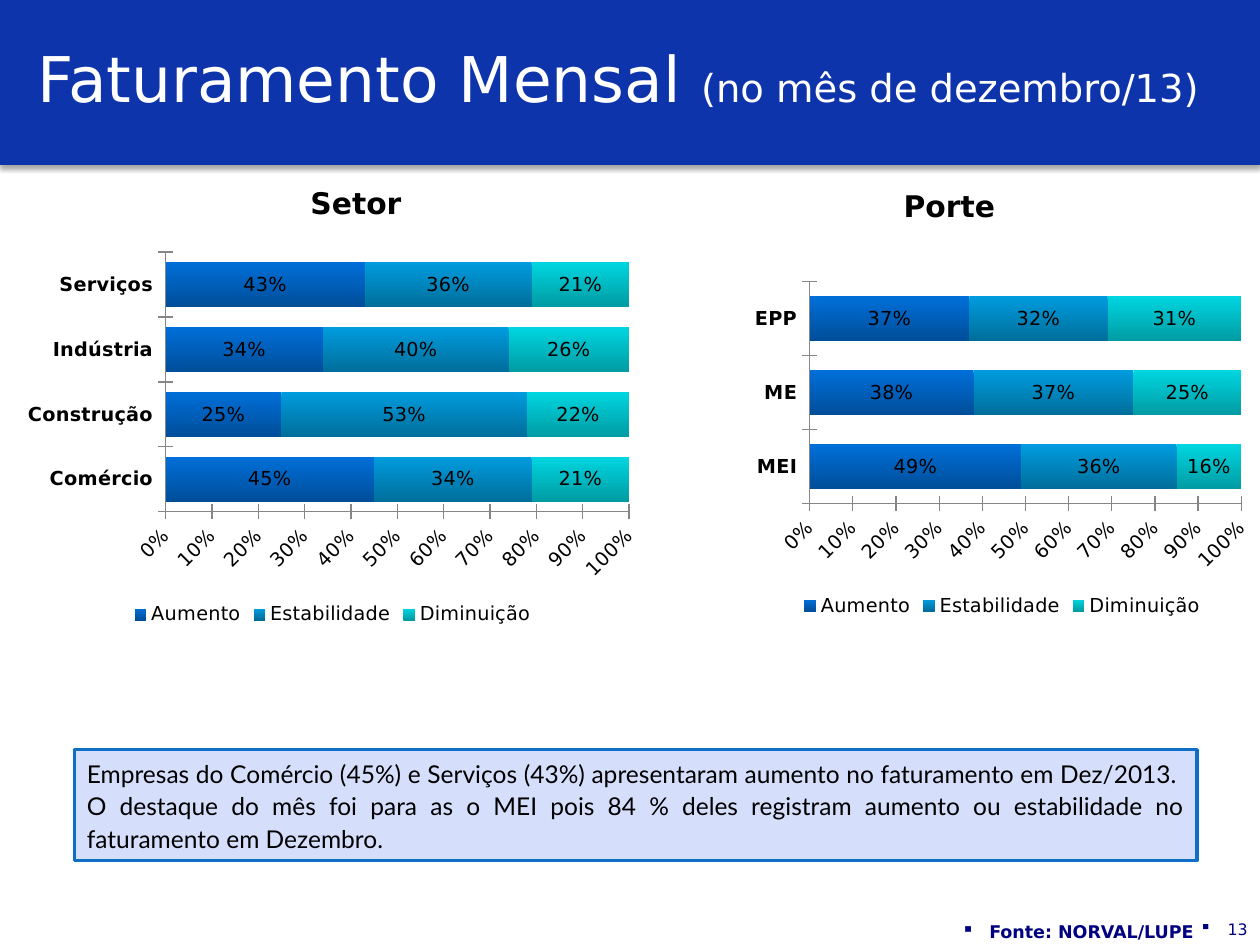
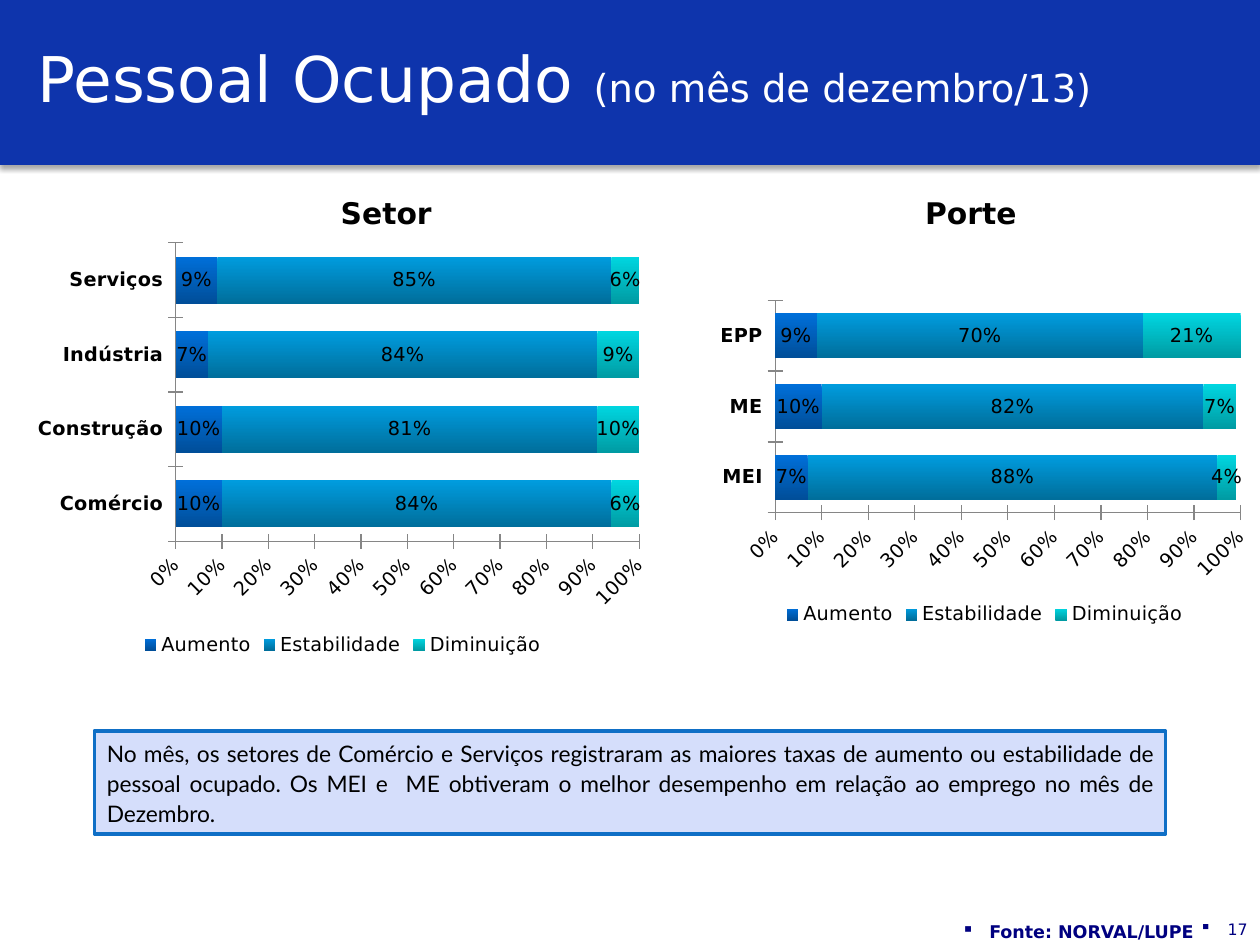
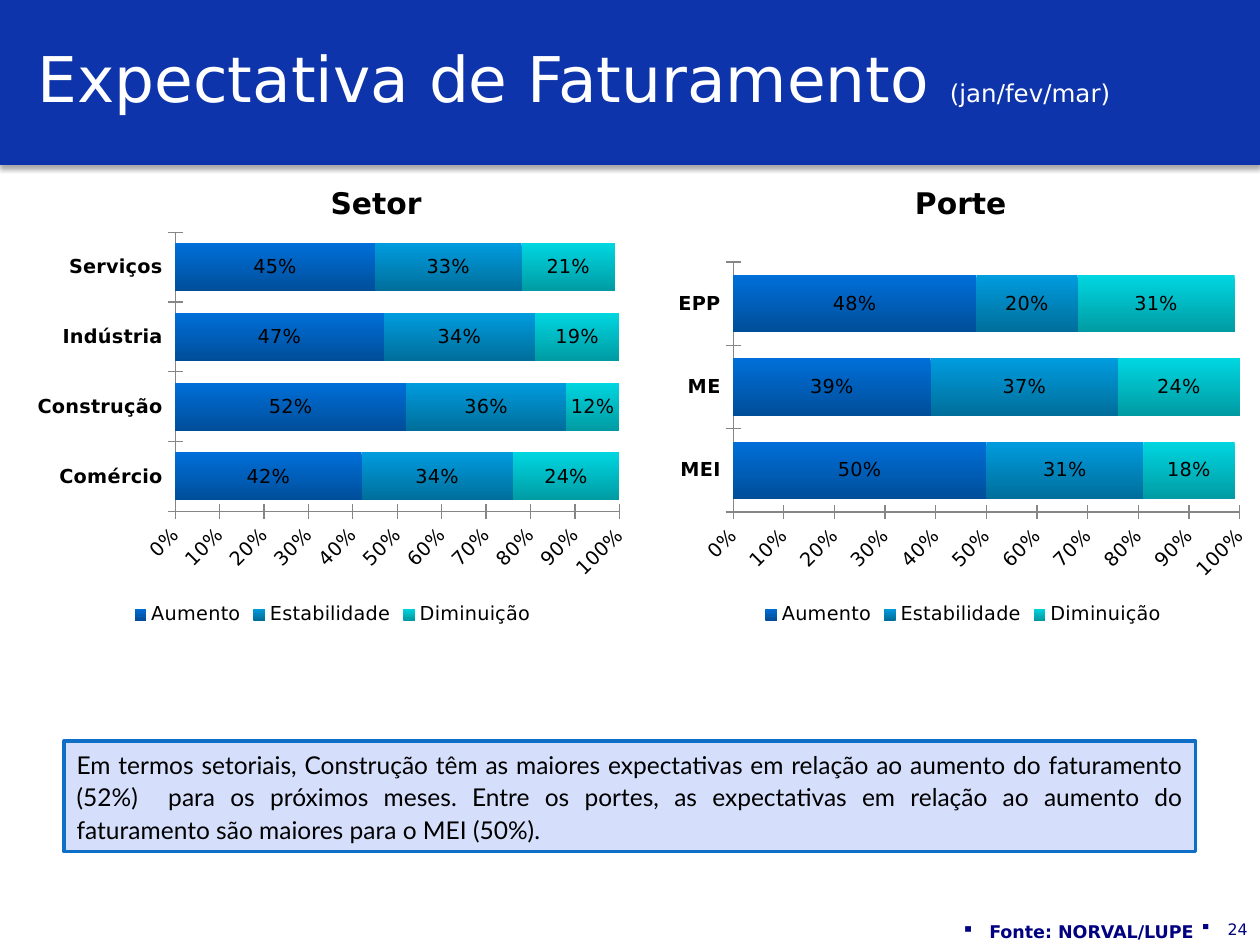
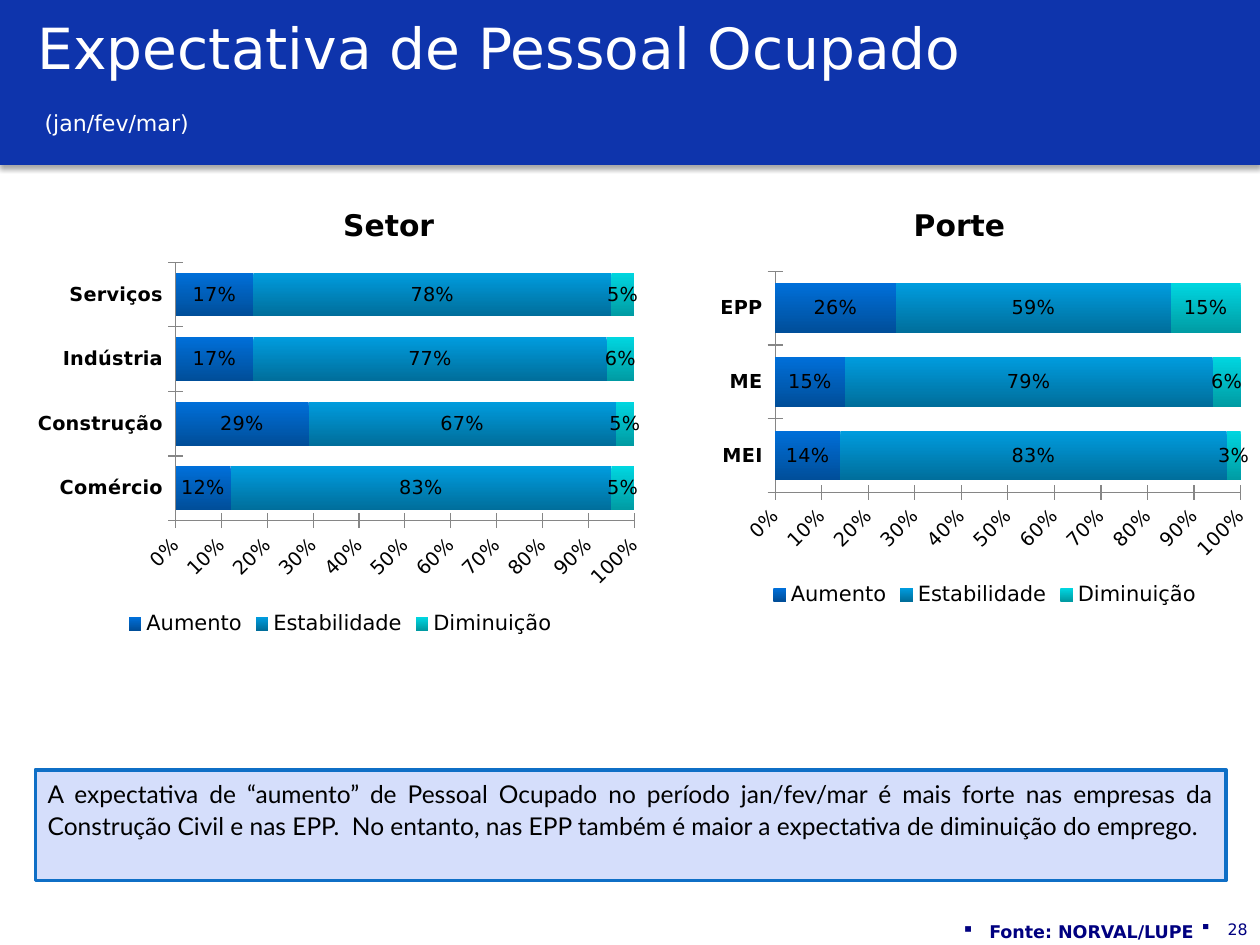
from lxml import etree
from pptx import Presentation
from pptx.chart.data import CategoryChartData
from pptx.dml.color import RGBColor
from pptx.enum.chart import XL_CHART_TYPE, XL_LEGEND_POSITION, XL_TICK_MARK
from pptx.enum.shapes import MSO_SHAPE
from pptx.enum.text import MSO_ANCHOR, PP_ALIGN
from pptx.oxml.ns import qn
from pptx.util import Inches, Pt

BAND_BLUE = RGBColor(0x0E, 0x34, 0xAC)
WHITE = RGBColor(0xFF, 0xFF, 0xFF)
BLACK = RGBColor(0, 0, 0)
NAVY = RGBColor(0, 0, 0x80)
NOTE_FILL = RGBColor(0xD5, 0xDE, 0xFB)
NOTE_LINE = RGBColor(0x0F, 0x6F, 0xC6)
AXIS_GRAY = RGBColor(0x86, 0x86, 0x86)

FONT = "DejaVu Sans"
NOTE_FONT = "Lato"
SOURCE = "Fonte: NORVAL/LUPE"

# Series name, colour at the top of the bar, colour at the bottom
SERIES = [
    ("Aumento", RGBColor(0x00, 0x6F, 0xD9), RGBColor(0x00, 0x4E, 0x99)),
    ("Estabilidade", RGBColor(0x00, 0x9C, 0xDE), RGBColor(0x00, 0x6E, 0x9B)),
    ("Diminuição", RGBColor(0x00, 0xD6, 0xE0), RGBColor(0x00, 0x9B, 0xA3)),
]
SECTORS = ["Comércio", "Construção", "Indústria", "Serviços"]
SIZES = ["MEI", "ME", "EPP"]

# Title runs are (text, size); a heading is (left, top); a chart has its box,
# gap width and one row of values per series.
SLIDES = [
    {
        "number": 13,
        "title": [[("Faturamento Mensal ", 36), ("(no mês de dezembro/13)", 22)]],
        "headings": [(1.85, 1.39), (6.56, 1.41)],
        "charts": [
            ((0.12, 1.94, 5.04, 3.07), 44,
             [(0.45, 0.25, 0.34, 0.43), (0.34, 0.53, 0.4, 0.36), (0.21, 0.22, 0.26, 0.21)]),
            ((5.91, 2.18, 4.09, 2.76), 65,
             [(0.49, 0.38, 0.37), (0.36, 0.37, 0.32), (0.16, 0.25, 0.31)]),
        ],
        "note_box": (0.59, 5.95, 8.91, 0.88),
        "note": "Empresas do Comércio (45%) e Serviços (43%) apresentaram aumento no "
                "faturamento em Dez/2013.  O destaque do mês foi para as o MEI pois 84 % "
                "deles registram aumento ou estabilidade no faturamento em Dezembro.",
    },
    {
        "number": 17,
        "title": [[("Pessoal Ocupado ", 36), ("(no mês de dezembro/13)", 22)]],
        "headings": [(2.09, 1.47), (6.73, 1.47)],
        "charts": [
            ((0.2, 1.86, 5.04, 3.39), 59,
             [(0.1, 0.1, 0.07, 0.09), (0.84, 0.81, 0.84, 0.85), (0.06, 0.1, 0.09, 0.06)]),
            ((5.63, 2.33, 4.37, 2.68), 59,
             [(0.07, 0.1, 0.09), (0.88, 0.82, 0.7), (0.04, 0.07, 0.21)]),
        ],
        "note_box": (0.75, 5.8, 8.5, 0.82),
        "note_size": 13,
        "note": "No mês, os setores de Comércio e Serviços registraram as maiores taxas de "
                "aumento ou estabilidade de pessoal ocupado. Os MEI e  ME obtiveram o melhor "
                "desempenho em relação ao emprego no mês de Dezembro.",
    },
    {
        "number": 24,
        "title": [[("Expectativa de Faturamento ", 36), ("(jan/fev/mar)", 14)]],
        "headings": [(2.01, 1.39), (6.65, 1.39)],
        "charts": [
            ((0.2, 1.78, 4.88, 3.23), 45,
             [(0.42, 0.52, 0.47, 0.45), (0.34, 0.36, 0.34, 0.33), (0.24, 0.12, 0.19, 0.21)]),
            ((5.29, 2.02, 4.71, 2.99), 45,
             [(0.5, 0.39, 0.48), (0.31, 0.37, 0.2), (0.18, 0.24, 0.31)]),
        ],
        "note_box": (0.51, 5.88, 8.98, 0.88),
        "note": "Em termos setoriais, Construção têm as maiores expectativas em relação ao "
                "aumento do faturamento (52%)  para os próximos meses. Entre os portes, as "
                "expectativas em relação ao aumento do faturamento são maiores para o MEI (50%).",
    },
    {
        "number": 28,
        "title": [[("Expectativa de Pessoal Ocupado ", 32.4)],
                  [(" (jan/fev/mar)", 12.6), (" ", 28.8)]],
        "headings": [(2.11, 1.56), (6.64, 1.56)],
        "legend_size": 12,
        "charts": [
            ((0.2, 2.02, 5, 3.07), 48,
             [(0.12, 0.29, 0.17, 0.17), (0.83, 0.67, 0.77, 0.78), (0.05, 0.05, 0.06, 0.05)]),
            ((5.63, 2.1, 4.37, 2.76), 48,
             [(0.14, 0.15, 0.26), (0.83, 0.79, 0.59), (0.03, 0.06, 0.15)]),
        ],
        "note_box": (0.28, 6.11, 9.45, 0.88),
        "note": "A expectativa de “aumento” de Pessoal Ocupado no período jan/fev/mar é mais "
                "forte nas empresas da Construção Civil e nas EPP.  No entanto, nas EPP também "
                "é maior a expectativa de diminuição do emprego.",
    },
]


def inches(box):
    return [Inches(length) for length in box]


def style_font(font, size, color, name=FONT, bold=False):
    font.name = name
    font.size = Pt(size)
    font.bold = bold
    font.color.rgb = color


def add_text(slide, box, text, size, color, align, bold=False):
    """Add a one-paragraph text box and return the paragraph."""
    frame = slide.shapes.add_textbox(*inches(box)).text_frame
    frame.word_wrap = True
    paragraph = frame.paragraphs[0]
    paragraph.text = text
    paragraph.alignment = align
    style_font(paragraph.font, size, color, bold=bold)
    return paragraph


def add_band(slide, box):
    band = slide.shapes.add_shape(MSO_SHAPE.RECTANGLE, *inches(box))
    band.fill.solid()
    band.fill.fore_color.rgb = BAND_BLUE
    band.line.fill.background()
    band.shadow.inherit = False
    effects = band._element.spPr.find(qn("a:effectLst"))
    shadow = etree.SubElement(effects, qn("a:outerShdw"), blurRad=str(Pt(3.1)),
                              dist=str(Pt(1.8)), dir="5400000", rotWithShape="0")
    color = etree.SubElement(shadow, qn("a:srgbClr"), val=str(BLACK))
    etree.SubElement(color, qn("a:alpha"), val="35000")


def add_title(slide, box, lines):
    frame = slide.shapes.add_textbox(*inches(box)).text_frame
    frame.word_wrap = True
    frame.vertical_anchor = MSO_ANCHOR.MIDDLE
    paragraph = frame.paragraphs[0]
    for index, line in enumerate(lines):
        if index:
            paragraph.add_line_break()
        for text, size in line:
            run = paragraph.add_run()
            run.text = text
            style_font(run.font, size, WHITE)


def add_heading(slide, left, top, text):
    paragraph = add_text(slide, (left, top, 1.95, 0.39), text, 17, BLACK, PP_ALIGN.CENTER, True)
    paragraph.line_spacing = 1.1


def style_axis(axis):
    axis.has_major_gridlines = False
    axis.major_tick_mark = XL_TICK_MARK.CROSS
    axis.minor_tick_mark = XL_TICK_MARK.NONE
    axis.format.line.color.rgb = AXIS_GRAY
    axis.format.line.width = Pt(0.75)


def add_share_chart(slide, box, categories, gap, rows, legend_size):
    data = CategoryChartData(number_format="0%")
    data.categories = categories
    for (name, _, _), values in zip(SERIES, rows):
        data.add_series(name, values)
    chart = slide.shapes.add_chart(XL_CHART_TYPE.BAR_STACKED, *inches(box), data).chart
    style_font(chart.font, 11, BLACK)
    chart.has_title = False
    chart.has_legend = True
    chart.legend.position = XL_LEGEND_POSITION.BOTTOM
    chart.legend.include_in_layout = False
    style_font(chart.legend.font, legend_size, BLACK)

    style_axis(chart.category_axis)
    style_font(chart.category_axis.tick_labels.font, 11, BLACK, bold=True)
    value_axis = chart.value_axis
    style_axis(value_axis)
    value_axis.minimum_scale, value_axis.maximum_scale = 0, 1
    value_axis.major_unit = 0.1
    value_axis.tick_labels.number_format = "0%"
    value_axis.tick_labels.number_format_is_linked = False
    style_font(value_axis.tick_labels.font, 11, BLACK)
    label_body = value_axis._element.find(qn("c:txPr")).find(qn("a:bodyPr"))
    label_body.set("rot", "-2700000")

    plot = chart.plots[0]
    plot.gap_width = gap
    plot.overlap = 100
    plot.vary_by_categories = False
    for series, (_, top_color, bottom_color) in zip(plot.series, SERIES):
        fill = series.format.fill
        fill.gradient()
        fill.gradient_angle = 270
        for stop, color in zip(fill.gradient_stops, (top_color, bottom_color)):
            stop.color.rgb = color
        labels = series.data_labels
        labels.show_value = True
        labels.number_format = "0%"
        labels.number_format_is_linked = False
        style_font(labels.font, 11, BLACK)


def add_note(slide, box, text, size):
    note = slide.shapes.add_shape(MSO_SHAPE.RECTANGLE, *inches(box))
    note.shadow.inherit = False
    note.fill.solid()
    note.fill.fore_color.rgb = NOTE_FILL
    note.line.color.rgb = NOTE_LINE
    note.line.width = Pt(2)
    frame = note.text_frame
    frame.word_wrap = True
    frame.vertical_anchor = MSO_ANCHOR.TOP
    paragraph = frame.paragraphs[0]
    paragraph.text = text
    paragraph.alignment = PP_ALIGN.JUSTIFY
    paragraph.line_spacing = 1.1
    style_font(paragraph.font, size, BLACK, NOTE_FONT)


def add_bullet(paragraph):
    properties = paragraph._p.get_or_add_pPr()
    properties.set("marL", str(Inches(0.22)))
    properties.set("indent", str(-Inches(0.22)))
    bullet = etree.Element(qn("a:buChar"), char="▪")
    properties.insert_element_before(bullet, "a:tabLst", "a:defRPr", "a:extLst")


def add_footer(slide, number):
    add_bullet(add_text(slide, (8.81, 7.25, 1.19, 0.25), str(number), 9, NAVY, PP_ALIGN.RIGHT))
    add_bullet(add_text(slide, (4.69, 7.26, 4.88, 0.24), SOURCE, 10, NAVY, PP_ALIGN.RIGHT, True))


def add_results_slide(presentation, content):
    slide = presentation.slides.add_slide(presentation.slide_layouts[6])
    add_band(slide, (0, 0, 10, 1.31))
    add_title(slide, (0.2, 0.08, 9.69, 1.07), content["title"])
    for (left, top), text in zip(content["headings"], ("Setor", "Porte")):
        add_heading(slide, left, top, text)
    add_note(slide, content["note_box"], content["note"], content.get("note_size", 14))
    add_footer(slide, content["number"])
    for categories, (box, gap, rows) in zip((SECTORS, SIZES), content["charts"]):
        add_share_chart(slide, box, categories, gap, rows, content.get("legend_size", 11))


def main():
    presentation = Presentation()
    presentation.slide_width = Inches(10)
    presentation.slide_height = Inches(7.5)
    for content in SLIDES:
        add_results_slide(presentation, content)
    presentation.save("out.pptx")


if __name__ == "__main__":
    main()
